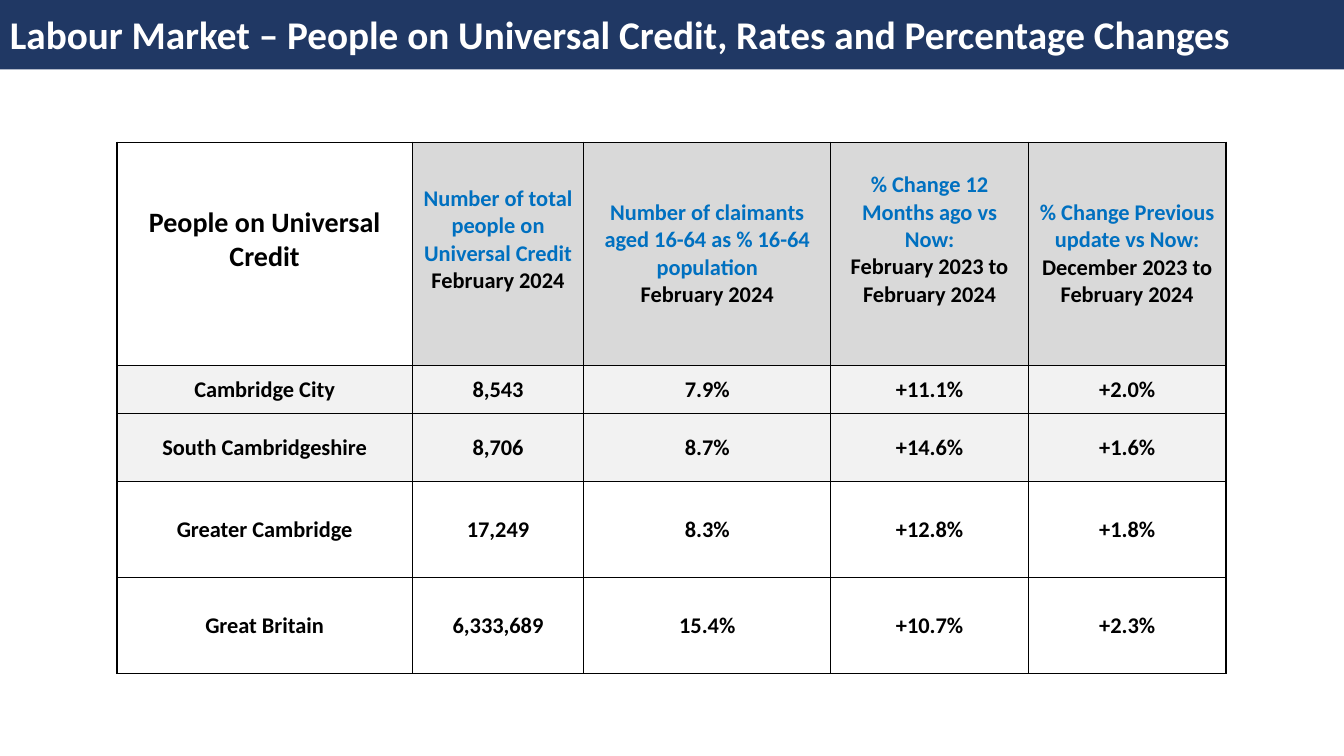
from lxml.etree import SubElement
from pptx import Presentation
from pptx.dml.color import RGBColor
from pptx.enum.shapes import MSO_SHAPE as SHAPE
from pptx.enum.text import MSO_ANCHOR as ANCHOR, PP_ALIGN as ALIGN
from pptx.oxml.ns import qn
from pptx.util import Inches, Pt

NAVY = RGBColor(0x20, 0x38, 0x64)
BLUE = RGBColor(0x00, 0x70, 0xC0)
BLACK = RGBColor(0x00, 0x00, 0x00)
WHITE = RGBColor(0xFF, 0xFF, 0xFF)
GREY = RGBColor(0xD9, 0xD9, 0xD9)
PALE = RGBColor(0xF2, 0xF2, 0xF2)

TITLE = "Labour Market – People on Universal Credit, Rates and Percentage Changes"
CORNER = "People on Universal Credit"
HEADERS = [
    ("Number of total people on Universal Credit", "February 2024", 0.33),
    ("Number of claimants aged 16-64 as % 16-64 population", "February 2024", 0.05),
    ("% Change 12 Months ago vs Now:", "February 2023 to February 2024", 0.33),
    ("% Change Previous update vs Now:", "December 2023 to February 2024", 0.05),
]
AREAS = [
    (PALE, "Cambridge City", "8,543", "7.9%", "+11.1%", "+2.0%"),
    (PALE, "South Cambridgeshire", "8,706", "8.7%", "+14.6%", "+1.6%"),
    (WHITE, "Greater Cambridge", "17,249", "8.3%", "+12.8%", "+1.8%"),
    (WHITE, "Great Britain", "6,333,689", "15.4%", "+10.7%", "+2.3%"),
]
COL_WIDTHS = [2.93, 1.7, 2.45, 1.96, 1.96]
ROW_HEIGHTS = [2.22, 0.47, 0.68, 0.95, 0.95]


class SlideBuilder:
    font = "Calibri"

    def __init__(self, s):
        self.s = s

    def paragraph(self, p, text, size, color, align):
        p.text = text
        p.alignment = align
        p.font.name = self.font
        p.font.size = Pt(size)
        p.font.bold = True
        p.font.color.rgb = color

    def banner(self, text, x, y, w, h):
        sp = self.s.shapes.add_shape(SHAPE.RECTANGLE, Inches(x), Inches(y), Inches(w), Inches(h))
        sp.shadow.inherit = False
        sp.fill.solid()
        sp.fill.fore_color.rgb = NAVY
        sp.line.fill.background()
        tf = sp.text_frame
        tf.word_wrap = True
        tf.vertical_anchor = ANCHOR.MIDDLE
        self.paragraph(tf.paragraphs[0], text, 28, WHITE, ALIGN.LEFT)

    def table(self, x, y, widths, heights):
        frame = self.s.shapes.add_table(len(heights), len(widths), Inches(x), Inches(y),
                                        Inches(sum(widths)), Inches(sum(heights)))
        table = frame.table
        for column, width in zip(table.columns, widths):
            column.width = Inches(width)
        for row, height in zip(table.rows, heights):
            row.height = Inches(height)
        return table

    def cell(self, cell, lines, fill, size=16, side=0.1, bottom=0.05):
        cell.vertical_anchor = ANCHOR.MIDDLE
        cell.margin_left = cell.margin_right = Inches(side)
        cell.margin_bottom = Inches(bottom)
        tf = cell.text_frame
        for i, (text, color) in enumerate(lines):
            p = tf.add_paragraph() if i else tf.paragraphs[0]
            self.paragraph(p, text, size, color, ALIGN.CENTER)
        self.borders(cell)
        cell.fill.solid()
        cell.fill.fore_color.rgb = fill

    def borders(self, cell):
        props = cell._tc.get_or_add_tcPr()
        for side in ("a:lnL", "a:lnR", "a:lnT", "a:lnB"):
            line = SubElement(props, qn(side), w=str(Pt(1)))
            solid = SubElement(line, qn("a:solidFill"))
            SubElement(solid, qn("a:srgbClr"), val=str(BLACK))


def main():
    prs = Presentation()
    prs.slide_width, prs.slide_height = Inches(13.33), Inches(7.5)
    slide = SlideBuilder(prs.slides.add_slide(prs.slide_layouts[6]))
    slide.banner(TITLE, 0, -0.02, 13.33, 0.71)

    table = slide.table(1.16, 1.41, COL_WIDTHS, ROW_HEIGHTS)
    slide.cell(table.cell(0, 0), [(CORNER, BLACK)], WHITE, size=20, bottom=0.33)
    for c, (measure, period, bottom) in enumerate(HEADERS, 1):
        slide.cell(table.cell(0, c), [(measure, BLUE), (period, BLACK)], GREY, bottom=bottom)
    for r, (fill, *values) in enumerate(AREAS, 1):
        for c, value in enumerate(values):
            slide.cell(table.cell(r, c), [(value, BLACK)], fill, side=0 if c else 0.1)

    prs.save("out.pptx")


if __name__ == "__main__":
    main()
